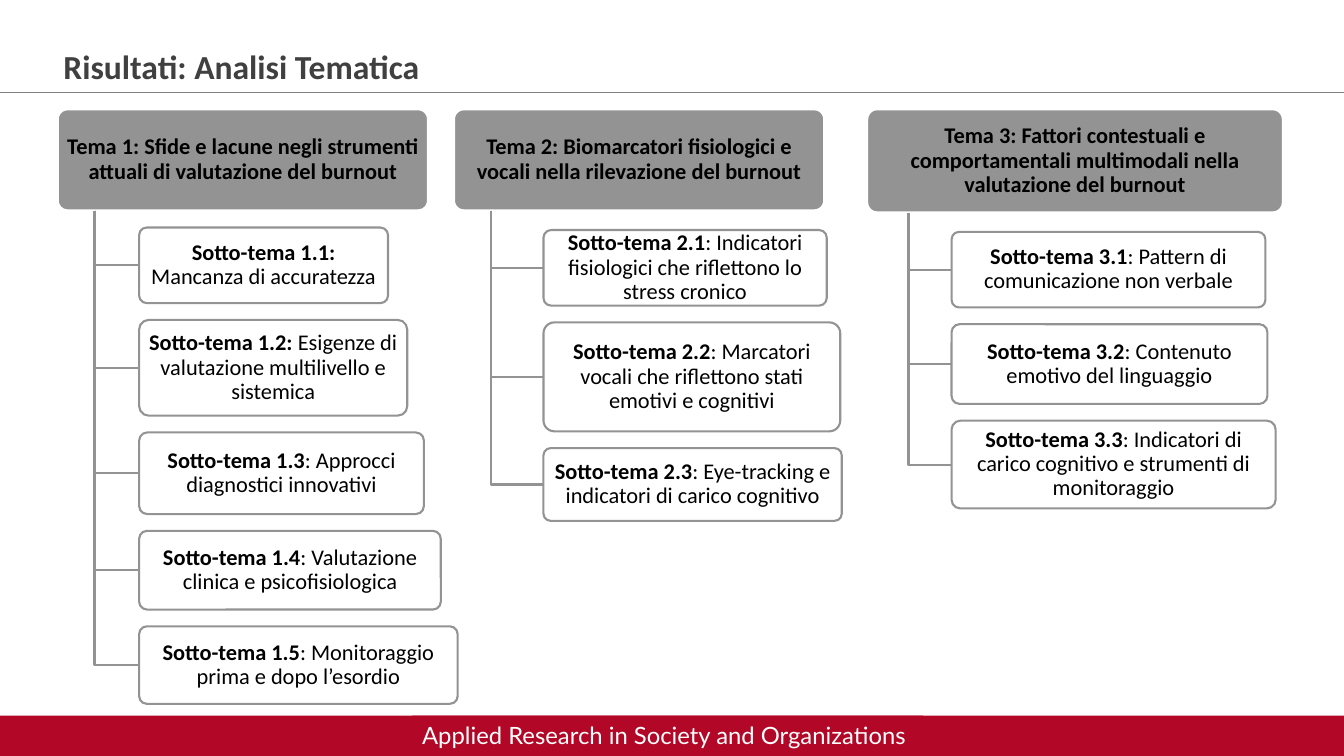
from lxml.etree import SubElement
from pptx import Presentation
from pptx.dml.color import RGBColor
from pptx.enum.shapes import MSO_CONNECTOR, MSO_SHAPE
from pptx.enum.text import MSO_ANCHOR, MSO_AUTO_SIZE, PP_ALIGN
from pptx.oxml.ns import qn
from pptx.util import Pt

WHITE = RGBColor(0xFF, 0xFF, 0xFF)
BLACK = RGBColor(0, 0, 0)
GREY = RGBColor(0x93, 0x93, 0x93)
RULE_GREY = RGBColor(0x80, 0x80, 0x80)
TITLE_GREY = RGBColor(0x40, 0x40, 0x40)
RED = RGBColor(0xB2, 0x07, 0x26)

SLIDE_W, SLIDE_H = 960, 540
THEME_TOP = 77.8
BOX_GAP = 12

# left, width, height, title, left of sub-themes, top of first, [(width, height, bold, plain)]
THEMES = [
    (41, 265, 72.7, "Tema 1: Sfide e lacune negli strumenti attuali di valutazione del burnout", 99.4, 162.5, [
        (177.8, 54, "Sotto-tema 1.1: ", "Mancanza di accuratezza"),
        (191.5, 68.4, "Sotto-tema 1.2:", " Esigenze di valutazione multilivello e sistemica"),
        (203.4, 58.3, "Sotto-tema 1.3", ": Approcci diagnostici innovativi"),
        (215.5, 56.2, "Sotto-tema 1.4", ": Valutazione clinica e psicofisiologica"),
        (227.5, 55.4, "Sotto-tema 1.5", ": Monitoraggio prima e dopo l’esordio"),
    ]),
    (324, 265, 72.7, "Tema 2: Biomarcatori fisiologici e vocali nella rilevazione del burnout", 388.2, 164.3, [
        (202.3, 54, "Sotto-tema 2.1", ": Indicatori fisiologici che riflettono lo stress cronico"),
        (212, 77.8, "Sotto-tema 2.2", ": Marcatori vocali che riflettono stati emotivi e cognitivi"),
        (213.1, 52, "Sotto-tema 2.3", ": Eye-tracking e indicatori di carico cognitivo"),
    ]),
    (619.2, 297.4, 74.2, "Tema 3: Fattori contestuali e comportamentali multimodali nella valutazione del burnout", 679.7, 165.6, [
        (224.2, 54, "Sotto-tema 3.1", ": Pattern di comunicazione non verbale"),
        (225.6, 56.9, "Sotto-tema 3.2", ": Contenuto emotivo del linguaggio"),
        (231.5, 62.7, "Sotto-tema 3.3", ": Indicatori di carico cognitivo e strumenti di monitoraggio"),
    ]),
]


def add_run(p, text, size, color, bold=False, font="Calibri"):
    r = p.add_run()
    r.text = text
    r.font.name = font
    r.font.size = Pt(size)
    r.font.bold = bold
    r.font.color.rgb = color


def add_box(left, top, width, height, fill, line, line_width, runs):
    """Add a rounded box with centred text; runs are (text, bold) pairs."""
    sp = s.shapes.add_shape(MSO_SHAPE.ROUNDED_RECTANGLE, Pt(left), Pt(top), Pt(width), Pt(height))
    sp.adjustments[0] = 0.1
    sp.shadow.inherit = False
    sp.fill.solid()
    sp.fill.fore_color.rgb = fill
    sp.line.color.rgb = line
    sp.line.width = Pt(line_width)
    tf = sp.text_frame
    tf.word_wrap = True
    tf.vertical_anchor = MSO_ANCHOR.MIDDLE
    tf.margin_left = tf.margin_right = Pt(2.2)
    tf.margin_top = tf.margin_bottom = Pt(1.4)
    p = tf.paragraphs[0]
    p.alignment = PP_ALIGN.CENTER
    p.line_spacing = 0.9
    for text, bold in runs:
        add_run(p, text, 16, BLACK, bold)
    return sp


prs = Presentation()
prs.slide_width, prs.slide_height = Pt(SLIDE_W), Pt(SLIDE_H)
s = prs.slides.add_slide(prs.slide_layouts[6])

# Title and rule
rule = s.shapes.add_connector(MSO_CONNECTOR.STRAIGHT, Pt(SLIDE_W), Pt(65.8), Pt(0), Pt(65.8))
rule.line.color.rgb = RULE_GREY
rule.line.width = Pt(0.25)
SubElement(rule.element.spPr, qn("a:effectLst"))

title = s.shapes.add_textbox(Pt(38.2), Pt(29.5), Pt(710), Pt(36))
title.text_frame.word_wrap = True
title.text_frame.auto_size = MSO_AUTO_SIZE.SHAPE_TO_FIT_TEXT
add_run(title.text_frame.paragraphs[0], "Risultati: Analisi Tematica", 24, TITLE_GREY, True)

# Footer
bar = s.shapes.add_shape(MSO_SHAPE.RECTANGLE, Pt(0), Pt(511.2), Pt(SLIDE_W), Pt(28.8))
bar.shadow.inherit = False
bar.fill.solid()
bar.fill.fore_color.rgb = RED
bar.line.fill.background()

footer = s.shapes.add_textbox(Pt(294.5), Pt(511.2), Pt(365), Pt(28))
footer.fill.solid()
footer.fill.fore_color.rgb = RED
footer.text_frame.word_wrap = True
footer.text_frame.auto_size = MSO_AUTO_SIZE.SHAPE_TO_FIT_TEXT
add_run(footer.text_frame.paragraphs[0], "Applied Research in Society and Organizations", 17, WHITE, font="Lato")

# Theme columns
for left, width, height, theme, sub_left, top, subthemes in THEMES:
    add_box(left, THEME_TOP, width, height, GREY, WHITE, 2, [(theme, True)])
    trunk_x = left + width / 10
    trunk_top = THEME_TOP + height
    for sub_width, sub_height, label, text in subthemes:
        middle = top + sub_height / 2
        fb = s.shapes.build_freeform(Pt(trunk_x), Pt(trunk_top))
        fb.add_line_segments([(Pt(trunk_x), Pt(middle)), (Pt(sub_left), Pt(middle))], close=False)
        branch = fb.convert_to_shape()
        branch.shadow.inherit = False
        branch.fill.background()
        branch.line.color.rgb = GREY
        branch.line.width = Pt(1.5)

        box = add_box(sub_left, top, sub_width, sub_height, WHITE, GREY, 1.5, [(label, True), (text, False)])
        fill_color = box.element.spPr.find(qn("a:solidFill"))[0]
        SubElement(fill_color, qn("a:alpha"), val="90000")
        top += sub_height + BOX_GAP

prs.save("out.pptx")
